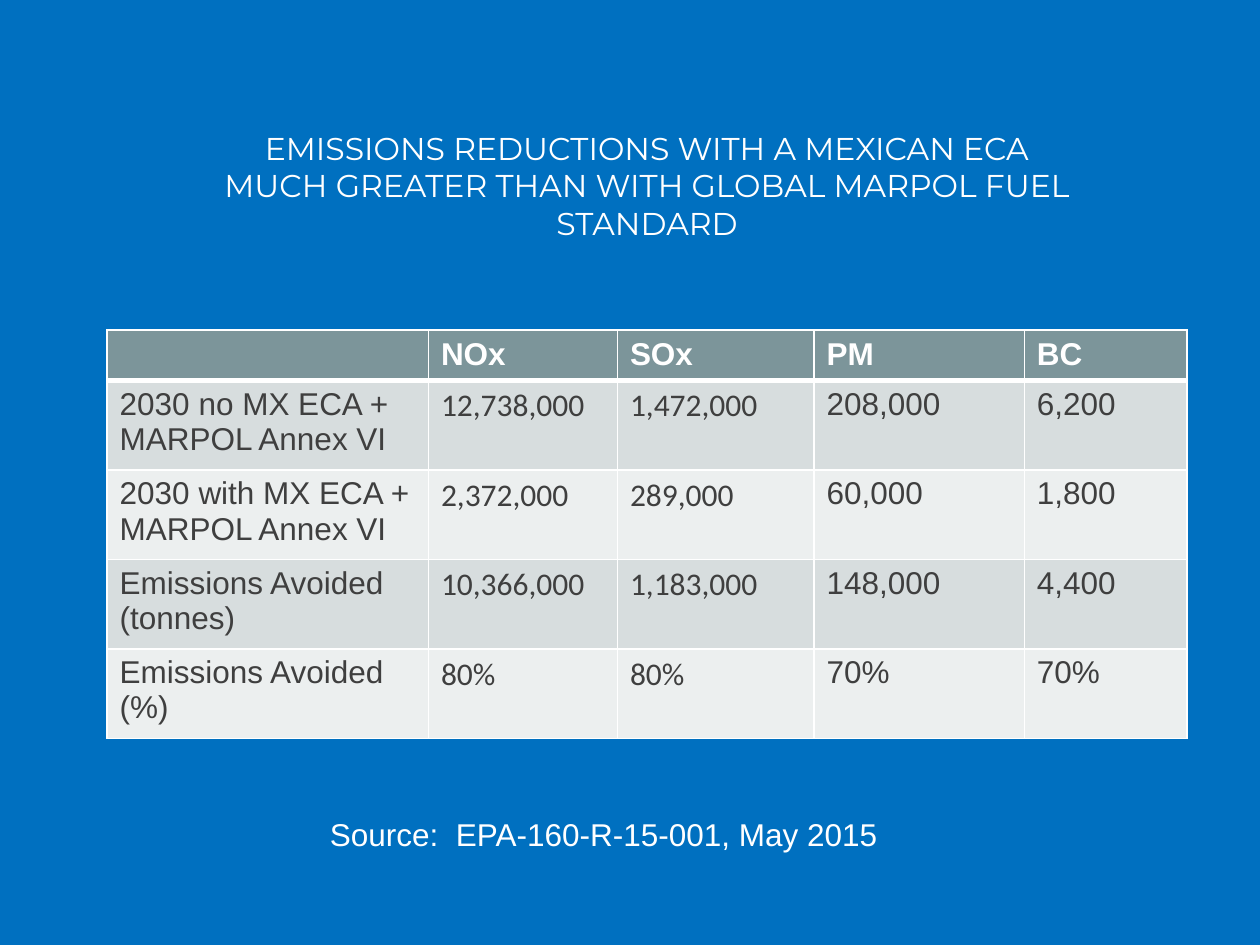
from lxml import etree
from pptx import Presentation
from pptx.dml.color import RGBColor
from pptx.enum.text import MSO_ANCHOR, MSO_AUTO_SIZE, PP_ALIGN
from pptx.oxml.ns import qn
from pptx.util import Inches, Pt

TOP = MSO_ANCHOR.TOP
NO_FIT = MSO_AUTO_SIZE.NONE
CENTER = PP_ALIGN.CENTER
TITLE_ONLY = 5

WHITE, BLUE, INK = "FFFFFF", "0070C0", "3F3F3F"
HEADER_FILL, BAND_FILLS = "7C959A", ("D7DDDE", "ECEFEF")
COLUMN_WIDTHS = (2.55, 1.5, 1.56, 1.67, 1.29)
ROW_HEIGHTS = (0.4, 0.71, 0.71, 0.71, 0.71)
EMISSIONS = (
    ("", "NOx", "SOx", "PM", "BC"),
    ("2030 no MX ECA + MARPOL Annex VI", "12,738,000", "1,472,000", "208,000", "6,200"),
    ("2030 with MX ECA + MARPOL Annex VI", "2,372,000", "289,000", "60,000", "1,800"),
    ("Emissions Avoided\n(tonnes)", "10,366,000", "1,183,000", "148,000", "4,400"),
    ("Emissions Avoided (%)", "80%", "80%", "70%", "70%"),
)


def color(value):
    """Turn a hex string into a colour."""
    return RGBColor.from_string(value)


def style_text(frame, font_name, ink, bold=False):
    """Format every paragraph of a text frame at the slide's one text size."""
    for paragraph in frame.paragraphs:
        font = paragraph.font
        font.name, font.size, font.bold = font_name, Pt(18), bold
        font.color.rgb = color(ink)
        for run in paragraph.runs:
            run.font.name, run.font.size, run.font.bold = font_name, Pt(18), bold
            run.font.color.rgb = color(ink)


def add_borders(cell, top, bottom):
    """Draw white cell borders with the given top and bottom weights."""
    properties = cell._tc.get_or_add_tcPr()
    for side, weight in (("L", 1), ("R", 1), ("T", top), ("B", bottom)):
        line = etree.SubElement(properties, qn(f"a:ln{side}"), w=str(Pt(weight)))
        fill = etree.SubElement(line, qn("a:solidFill"))
        etree.SubElement(fill, qn("a:srgbClr"), val=WHITE)


def add_title(slide):
    """Fill and place the title."""
    title = slide.shapes.title
    title.left, title.top, title.width, title.height = map(Inches, (1.52, 0.97, 7.23, 2.16))
    frame = title.text_frame
    frame.text = ("EMISSIONS REDUCTIONS WITH A MEXICAN ECA\v"
                  "MUCH GREATER THAN WITH GLOBAL MARPOL FUEL STANDARD")
    frame.vertical_anchor, frame.auto_size, frame.word_wrap = TOP, NO_FIT, True
    frame.paragraphs[0].alignment = CENTER
    style_text(frame, "Montserrat", WHITE)


def add_emissions_table(slide):
    """Build the banded table of emissions by pollutant."""
    table = slide.shapes.add_table(
        len(EMISSIONS), len(COLUMN_WIDTHS), Inches(0.85), Inches(2.62),
        Inches(sum(COLUMN_WIDTHS)), Inches(sum(ROW_HEIGHTS))).table
    for column, width in zip(table.columns, COLUMN_WIDTHS):
        column.width = Inches(width)
    for row, height in zip(table.rows, ROW_HEIGHTS):
        row.height = Inches(height)
    for row_index, values in enumerate(EMISSIONS):
        header = row_index == 0
        for column_index, value in enumerate(values):
            cell = table.cell(row_index, column_index)
            cell.text = value
            add_borders(cell, 3 if row_index == 1 else 1, 3 if header else 1)
            cell.fill.solid()
            cell.fill.fore_color.rgb = color(
                HEADER_FILL if header else BAND_FILLS[(row_index - 1) % 2])
            font_name = "Calibri" if not header and column_index in (1, 2) else "Arial"
            style_text(cell.text_frame, font_name, WHITE if header else INK, header)


def add_source(slide):
    """Add the source line below the table."""
    source = slide.shapes.add_textbox(*map(Inches, (2.52, 6.42, 4.85, 0.71)))
    source.text_frame.text = "Source:  EPA-160-R-15-001, May 2015"
    source.text_frame.word_wrap = False
    style_text(source.text_frame, "Arial", WHITE)


def main():
    """Build and save the slide."""
    presentation = Presentation()
    presentation.slide_width, presentation.slide_height = Inches(10), Inches(7.5)
    slide = presentation.slides.add_slide(presentation.slide_layouts[TITLE_ONLY])
    slide.background.fill.solid()
    slide.background.fill.fore_color.rgb = color(BLUE)
    add_title(slide)
    add_emissions_table(slide)
    add_source(slide)
    presentation.save("out.pptx")


if __name__ == "__main__":
    main()
